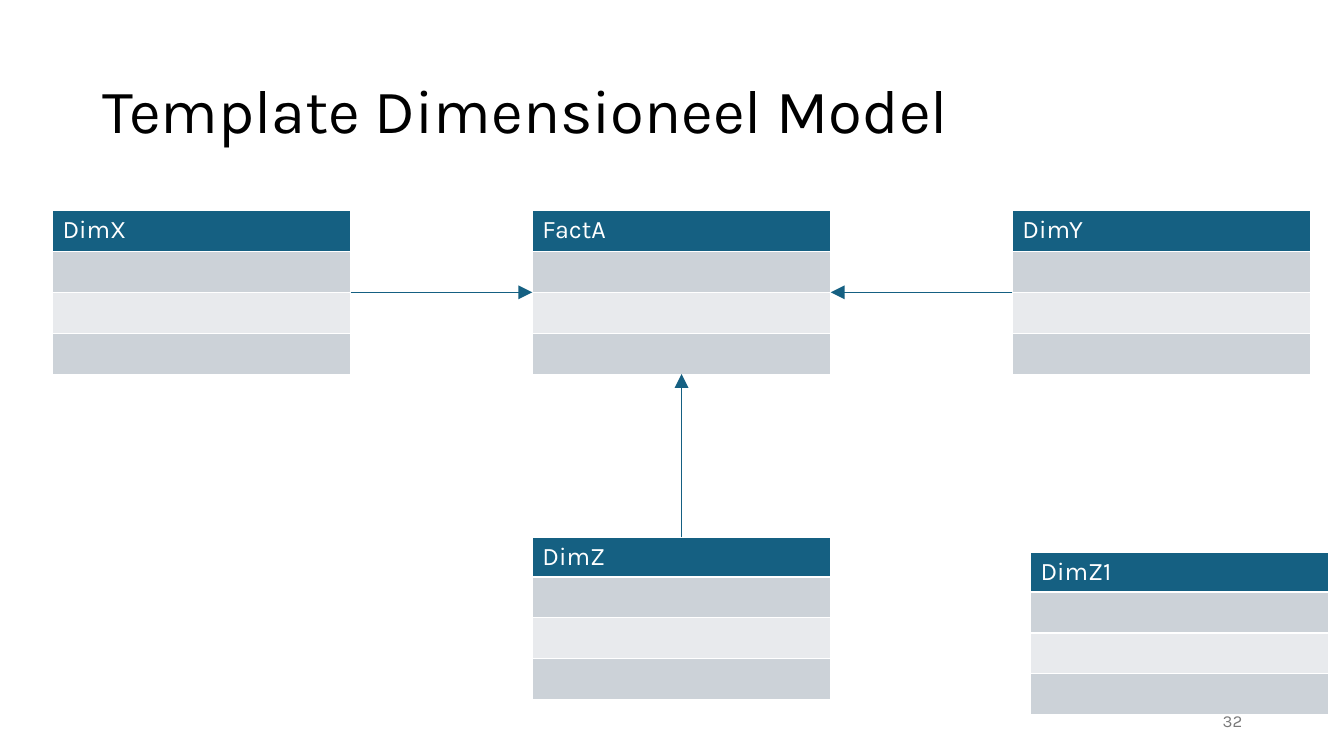
from lxml import etree
from pptx import Presentation
from pptx.dml.color import RGBColor
from pptx.enum import shapes, text
from pptx.oxml.ns import qn
from pptx.util import Inches, Pt

TITLE = "Template Dimensioneel Model"
PAGE_NUMBER = "32"
FONT = "Karla"
BLUE, WHITE, BLACK, GREY = "156082", "FFFFFF", "000000", "797979"
BANDS = ["CCD2D8", "E8EAED", "CCD2D8"]

TABLE_WIDTH, TABLE_HEIGHT = 2.96, 1.62
ROW_HEIGHT = TABLE_HEIGHT / (1 + len(BANDS))
LOW_HEADER = 0.39
# name: (left, top, header height)
ENTITIES = {
    "DimX": (0.52, 2.09, ROW_HEIGHT),
    "DimY": (10.04, 2.09, ROW_HEIGHT),
    "FactA": (5.28, 2.09, ROW_HEIGHT),
    "DimZ": (5.28, 5.33, LOW_HEADER),
    "DimZ1": (10.22, 5.48, LOW_HEADER),
}
# (entity, side) at the start and at the arrowhead
RELATIONS = [
    (("DimX", "right"), ("FactA", "left")),
    (("DimY", "left"), ("FactA", "right")),
    (("DimZ", "top"), ("FactA", "bottom")),
]
SIDES = {"left": (0, 0.5), "right": (1, 0.5), "top": (0.5, 0), "bottom": (0.5, 1)}


def color(value):
    return RGBColor.from_string(value)


def style(para, size, ink):
    para.font.name = FONT
    para.font.size = Pt(size)
    para.font.bold = False
    para.font.color.rgb = color(ink)


def add_borders(cell):
    properties = cell._tc.get_or_add_tcPr()
    for side in "LRTB":
        line = etree.SubElement(properties, qn("a:ln" + side), w=str(Pt(1)))
        fill = etree.SubElement(line, qn("a:solidFill"))
        etree.SubElement(fill, qn("a:srgbClr"), val=WHITE)


def add_entity(slide, name, left, top, header_height):
    frame = slide.shapes.add_table(
        1 + len(BANDS), 1, Inches(left), Inches(top),
        Inches(TABLE_WIDTH), Inches(header_height + len(BANDS) * ROW_HEIGHT))
    table = frame.table
    for index, shade in enumerate([BLUE] + BANDS):
        table.rows[index].height = Inches(ROW_HEIGHT if index else header_height)
        cell = table.cell(index, 0)
        add_borders(cell)
        cell.fill.solid()
        cell.fill.fore_color.rgb = color(shade)
    heading = table.cell(0, 0)
    heading.text = name
    style(heading.text_frame.paragraphs[0], 18, WHITE)


def anchor(name, side):
    left, top, _ = ENTITIES[name]
    across, down = SIDES[side]
    return Inches(left + across * TABLE_WIDTH), Inches(top + down * TABLE_HEIGHT)


def add_arrow(slide, start, end):
    arrow = slide.shapes.add_connector(
        shapes.MSO_CONNECTOR.STRAIGHT, *anchor(*start), *anchor(*end))
    arrow.line.color.rgb = color(BLUE)
    arrow.line.width = Pt(1)
    etree.SubElement(arrow.line._get_or_add_ln(), qn("a:tailEnd"),
                     type="triangle", w="lg", len="lg")
    etree.SubElement(arrow._element.spPr, qn("a:effectLst"))


def main():
    deck = Presentation()
    deck.slide_width, deck.slide_height = Inches(13.33), Inches(7.5)
    slide = deck.slides.add_slide(deck.slide_layouts[5])

    # Title
    title = slide.shapes.title
    title.left, title.top = Inches(0.92), Inches(0.4)
    title.width, title.height = Inches(11.5), Inches(1.45)
    title.text_frame.text = TITLE
    title.text_frame.vertical_anchor = text.MSO_ANCHOR.MIDDLE
    para = title.text_frame.paragraphs[0]
    para.alignment = text.PP_ALIGN.LEFT
    para.line_spacing = 0.9
    style(para, 44, BLACK)

    # Entities and their relations
    for name, place in ENTITIES.items():
        add_entity(slide, name, *place)
    for start, end in RELATIONS:
        add_arrow(slide, start, end)

    # Page number, in front of the tables
    box = slide.shapes.add_textbox(Inches(9.42), Inches(6.95), Inches(3), Inches(0.4))
    box.text_frame.word_wrap = True
    box.text_frame.vertical_anchor = text.MSO_ANCHOR.MIDDLE
    box.text_frame.text = PAGE_NUMBER
    para = box.text_frame.paragraphs[0]
    para.alignment = text.PP_ALIGN.RIGHT
    style(para, 12, GREY)

    deck.save("out.pptx")


if __name__ == "__main__":
    main()
